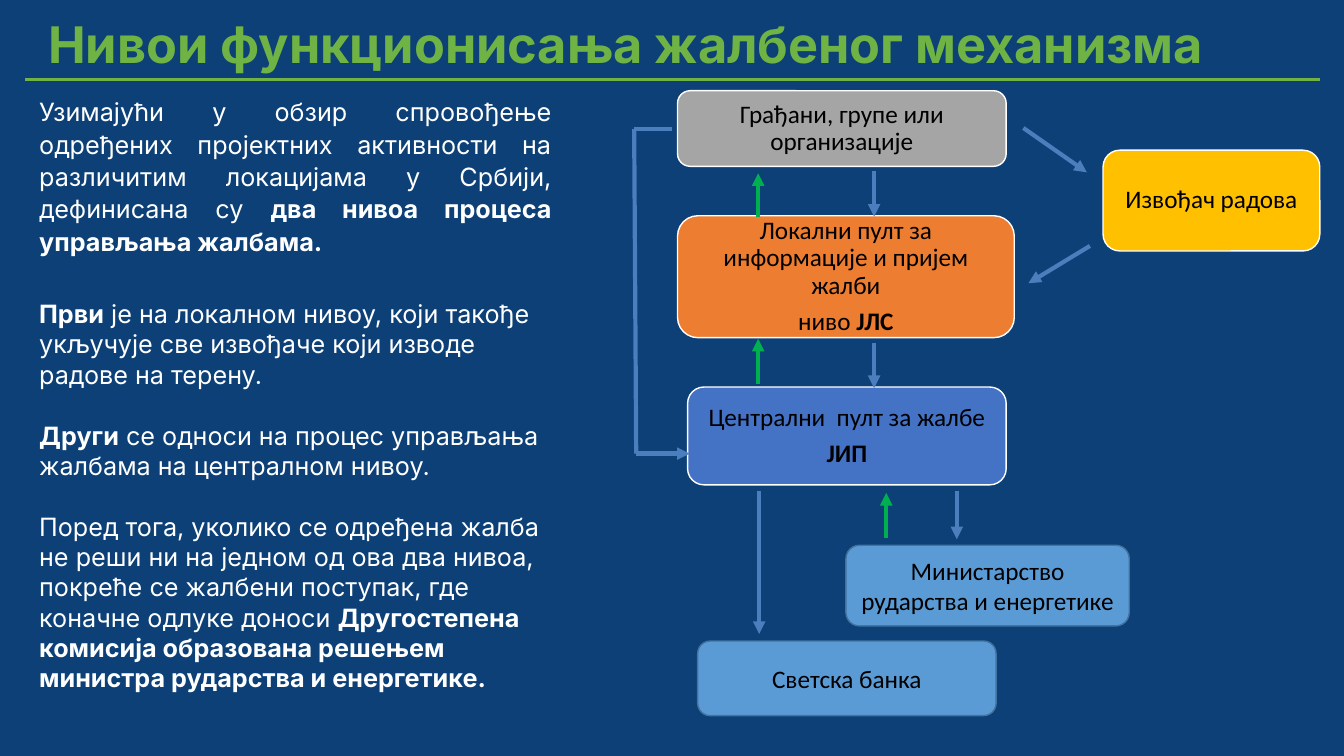
from itertools import pairwise

from lxml import etree
from pptx import Presentation
from pptx import util as u
from pptx.dml.color import RGBColor
from pptx.enum import shapes, text
from pptx.oxml import ns

NAVY, GREEN, WHITE, BLACK = "0C4077", "6EB344", "FFFFFF", "000000"
BLUE, UP_GREEN, SKY, SKY_EDGE = "4B7EBC", "00B050", "5B9BD5", "43739E"
LEFT, CENTER = text.PP_ALIGN.LEFT, text.PP_ALIGN.CENTER

INTRO = [
    ([("Узимајући у обзир спровођење одређених пројектних активности на различитим "
       "локацијама у Србији, дефинисана су ", False),
      ("два нивоа процеса управљања жалбама.", True)],
     dict(alignment=text.PP_ALIGN.JUSTIFY, line_spacing=1.07, space_after=u.Pt(30))),
    ([("Први", True),
      (" је на локалном нивоу, који такође укључује све извођаче који изводе радове "
       "на терену.", False)], dict(space_after=u.Pt(22))),
    ([("Други", True),
      (" се односи на процес управљања жалбама на централном нивоу.", False)],
     dict(space_after=u.Pt(22))),
    ([("Поред тога, уколико се одређена жалба не реши ни на једном од ова два нивоа, "
       "покреће се жалбени поступак, где коначне одлуке доноси ", False),
      ("Другостепена комисија образована решењем министра рударства и енергетике.", True)],
     {}),
]

STEP = dict(alignment=CENTER, line_spacing=0.9, space_after=u.Pt(6.3))
BODY = dict(alignment=CENTER)
BOXES = [
    ((6.72, 2.14, 3.34, 1.21), "ED7D31", WHITE, STEP,
     [[("Локални пулт за информације и пријем жалби", False)],
      [("ниво ", False), ("ЈЛС", True)]]),
    ((6.72, 0.9, 3.26, 0.75), "A5A5A5", WHITE, STEP,
     [[("Грађани, групе или oрганизације", False)]]),
    ((10.94, 1.49, 2.15, 1), "FFC000", WHITE, STEP, [[("Извођач радова", False)]]),
    ((6.82, 3.84, 3.16, 0.97), "4472C4", WHITE, STEP,
     [[("Централни  пулт за жалбе", False)], [("ЈИП", True)]]),
    ((8.39, 5.41, 2.81, 0.8), SKY, SKY_EDGE, BODY,
     [[("Министарство рударства и енергетике", False)]]),
    ((6.92, 6.36, 2.96, 0.74), SKY, SKY_EDGE, BODY, [[("Светска банка", False)]]),
]

ARROWS = [
    ((8.67, 1.7), (8.67, 2.15), BLUE),
    ((8.67, 3.4), (8.67, 3.85), BLUE),
    ((9.49, 4.87), (9.49, 5.35), BLUE),
    ((10.15, 1.27), (10.78, 1.71), BLUE),
    ((10.81, 2.44), (10.2, 2.81), BLUE),
    ((7.52, 2.15), (7.52, 1.72), UP_GREEN),
    ((7.52, 3.81), (7.52, 3.36), UP_GREEN),
    ((8.79, 5.34), (8.79, 4.89), UP_GREEN),
    ((7.53, 4.87), (7.53, 6.29), BLUE),
]
BYPASS = [(6.67, 1.28), (6.29, 1.28), (6.31, 4.5), (6.84, 4.5)]


def rgb(value):
    return RGBColor.from_string(value)


def assign(obj, values):
    for name, value in values.items():
        setattr(obj, name, value)


def write(tf, paragraphs, font, size, color, **frame):
    assign(tf, dict(word_wrap=True, auto_size=text.MSO_AUTO_SIZE.NONE, **frame))
    for i, (runs, fmt) in enumerate(paragraphs):
        p = tf.add_paragraph() if i else tf.paragraphs[0]
        assign(p, fmt)
        for words, bold in runs:
            r = p.add_run()
            r.text = words
            assign(r.font, dict(name=font, size=u.Pt(size), bold=bold))
            r.font.color.rgb = rgb(color)


def add_title(s, words):
    sp = s.shapes.title
    assign(sp, dict(left=u.Inches(0.15), top=u.Inches(0.08),
                    width=u.Inches(12.8), height=u.Inches(0.71)))
    write(sp.text_frame, [([(words, True)], dict(alignment=LEFT))], "Inter", 36, GREEN,
          vertical_anchor=text.MSO_ANCHOR.MIDDLE, margin_left=u.Inches(0.33))


def add_box(s, place, fill, edge, fmt, paragraphs):
    sp = s.shapes.add_shape(shapes.MSO_SHAPE.ROUNDED_RECTANGLE, *map(u.Inches, place))
    sp.shadow.inherit = False
    sp.fill.solid()
    sp.fill.fore_color.rgb = rgb(fill)
    sp.line.color.rgb = rgb(edge)
    sp.line.width = u.Pt(1)
    write(sp.text_frame, [(runs, fmt) for runs in paragraphs], "Calibri", 18, BLACK,
          vertical_anchor=text.MSO_ANCHOR.MIDDLE)


def add_line(s, start, end, color, width=3, arrow=True):
    cx = s.shapes.add_connector(shapes.MSO_CONNECTOR.STRAIGHT,
                                *map(u.Inches, (*start, *end)))
    cx.line.color.rgb = rgb(color)
    cx.line.width = u.Pt(width)
    if arrow:
        etree.SubElement(cx.line._get_or_add_ln(), ns.qn("a:tailEnd"), type="triangle")
    etree.SubElement(cx._element.spPr, ns.qn("a:effectLst"))


def main():
    prs = Presentation()
    assign(prs, dict(slide_width=u.Inches(13.33), slide_height=u.Inches(7.5)))
    s = prs.slides.add_slide(prs.slide_layouts[5])
    s.background.fill.solid()
    s.background.fill.fore_color.rgb = rgb(NAVY)

    add_line(s, (0.25, 0.79), (13.09, 0.79), GREEN, 1.75, False)
    add_title(s, "Нивои функционисања жалбеног механизма")
    tb = s.shapes.add_textbox(*map(u.Inches, (0.29, 0.89, 5.28, 6.07)))
    write(tb.text_frame, INTRO, "Inter", 18, WHITE)

    for box in BOXES:
        add_box(s, *box)
    for arrow in ARROWS:
        add_line(s, *arrow)
    for start, end in pairwise(BYPASS):
        add_line(s, start, end, BLUE, arrow=end == BYPASS[-1])

    prs.save("out.pptx")


if __name__ == "__main__":
    main()
